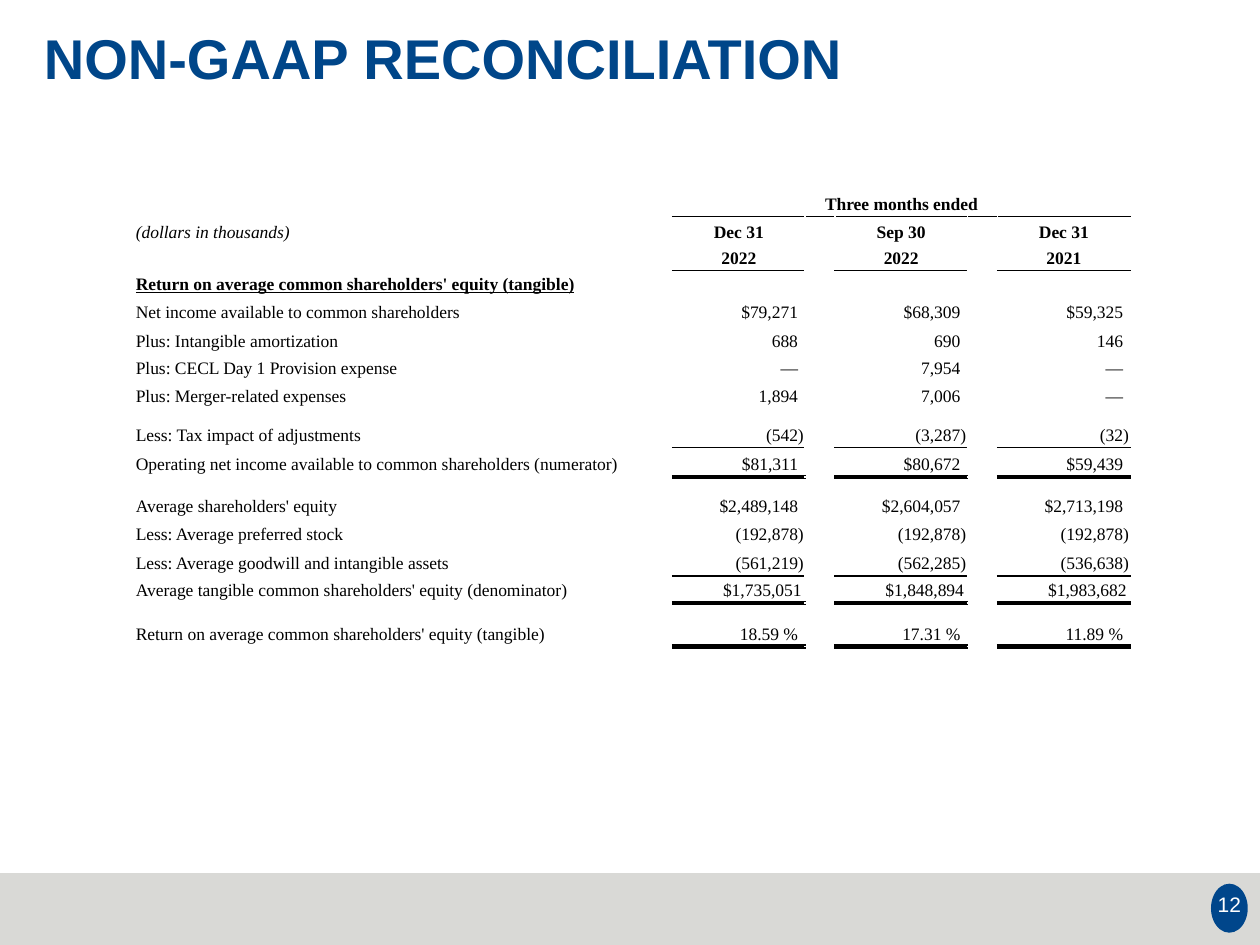
from lxml import etree
from pptx import Presentation
from pptx.dml.color import RGBColor
from pptx.enum.shapes import MSO_SHAPE
from pptx.enum.text import MSO_ANCHOR, PP_ALIGN
from pptx.oxml.ns import qn
from pptx.util import Pt

RECT, OVAL = MSO_SHAPE.RECTANGLE, MSO_SHAPE.OVAL
TOP, MIDDLE, BOTTOM = MSO_ANCHOR.TOP, MSO_ANCHOR.MIDDLE, MSO_ANCHOR.BOTTOM
LEFT, CENTER, RIGHT = PP_ALIGN.LEFT, PP_ALIGN.CENTER, PP_ALIGN.RIGHT

BLUE = RGBColor(0x00, 0x46, 0x89)
BADGE_BLUE = RGBColor(0x00, 0x46, 0x8B)
GRAY = RGBColor(0xD9, 0xD9, 0xD6)
WHITE = RGBColor(0xFF, 0xFF, 0xFF)
BLACK = RGBColor(0x00, 0x00, 0x00)

COL_WIDTHS = [267.8, 41, 75.6, 15.8, 75.6, 17.4, 75.6]
AMOUNT_COLS = (2, 4, 6)
LAST_COL = len(COL_WIDTHS) - 1

# Row height, label, amounts
ROWS = [
    (15, "", ["Three months ended"]),
    (16, "(dollars in thousands)", ["Dec 31", "Sep 30", "Dec 31"]),
    (15, "", ["2022", "2022", "2021"]),
    (15, "Return on average common shareholders' equity (tangible)", []),
    (16, "Net income available to common shareholders", ["$79,271", "$68,309", "$59,325"]),
    (16.5, "Plus: Intangible amortization", ["688", "690", "146"]),
    (15.5, "Plus: CECL Day 1 Provision expense", ["—", "7,954", "—"]),
    (16, "Plus: Merger-related expenses", ["1,894", "7,006", "—"]),
    (22, "Less: Tax impact of adjustments", ["(542)", "(3,287)", "(32)"]),
    (17, "Operating net income available to common shareholders (numerator)",
     ["$81,311", "$80,672", "$59,439"]),
    (10, "", []),
    (14, "Average shareholders' equity", ["$2,489,148", "$2,604,057", "$2,713,198"]),
    (16, "Less: Average preferred stock", ["(192,878)", "(192,878)", "(192,878)"]),
    (16.5, "Less: Average goodwill and intangible assets",
     ["(561,219)", "(562,285)", "(536,638)"]),
    (15.5, "Average tangible common shareholders' equity (denominator)",
     ["$1,735,051", "$1,848,894", "$1,983,682"]),
    (10, "", []),
    (15, "Return on average common shareholders' equity (tangible)",
     ["18.59 %", "17.31 %", "11.89 %"]),
]
HEADER_ROWS = 3
UNITS_ROW, SECTION_ROW, DENOMINATOR_ROW = 1, 3, 14
WIDE_LABEL_ROWS = (3, 4, 6, 9, 11, 13, 14, 16)
RULES = {0: 1, 2: 1, 8: 1, 9: 3, 13: 1, 14: 3, 16: 3}  # row: width of the line below


def add_block(s, kind, box, color):
    sp = s.shapes.add_shape(kind, *map(Pt, box))
    sp.shadow.inherit = False
    sp.fill.solid()
    sp.fill.fore_color.rgb = color
    sp.line.fill.background()


def add_run(p, text, font, size, color, bold=False):
    r = p.add_run()
    r.text = text
    r.font.name, r.font.size, r.font.bold = font, Pt(size), bold
    r.font.color.rgb = color
    return r


def add_text(s, box, text, size, color, align=LEFT, anchor=TOP, bold=False, spacing=1.0):
    tf = s.shapes.add_textbox(*map(Pt, box)).text_frame
    tf.word_wrap = True
    tf.vertical_anchor = anchor
    tf.margin_left = tf.margin_right = tf.margin_bottom = Pt(7.2)
    tf.margin_top = Pt(4.3)
    p = tf.paragraphs[0]
    p.alignment, p.line_spacing = align, spacing
    add_run(p, text, "Arial", size, color, bold)


def rule_width(row, col):
    """Width of the black line below a cell, or 0 where there is none."""
    ruled = col >= AMOUNT_COLS[0] if row == 0 else col in AMOUNT_COLS
    return RULES.get(row, 0) if ruled else 0


def set_borders(cell, row, col):
    tc_pr = cell._tc.get_or_add_tcPr()
    widths = {"lnL": 0, "lnR": 0, "lnT": rule_width(row - 1, col), "lnB": rule_width(row, col)}
    for tag, width in widths.items():
        ln = etree.SubElement(tc_pr, qn(f"a:{tag}"), w=str(Pt(width or 1)))
        fill = etree.SubElement(ln, qn("a:solidFill"))
        etree.SubElement(fill, qn("a:srgbClr"), val=str(BLACK if width else WHITE))


def fill_cell(cell, text, align, right_margin):
    cell.margin_left, cell.margin_right = Pt(2), Pt(right_margin)
    p = cell.text_frame.paragraphs[0]
    p.alignment, p.line_spacing = align, 1.0
    return add_run(p, text, "Times New Roman", 10, BLACK)


def amount_margin(row, text):
    """Closing brackets hang to the right of the digits."""
    if text.endswith(")"):
        return 0.7
    return 2 if row == DENOMINATOR_ROW else 4


def add_reconciliation(s, left, top):
    width, height = sum(COL_WIDTHS), sum(row[0] for row in ROWS)
    table = s.shapes.add_table(len(ROWS), len(COL_WIDTHS), Pt(left), Pt(top),
                               Pt(width), Pt(height)).table
    table.first_row = table.horz_banding = False
    for column, col_width in zip(table.columns, COL_WIDTHS):
        column.width = Pt(col_width)

    for i, (row_height, label, amounts) in enumerate(ROWS):
        table.rows[i].height = Pt(row_height)
        for j in range(len(COL_WIDTHS)):
            cell = table.cell(i, j)
            set_borders(cell, i, j)
            cell.fill.background()
            cell.vertical_anchor = BOTTOM
            cell.margin_top, cell.margin_bottom = Pt(0), Pt(1.4)

        # Label
        if label:
            r = fill_cell(table.cell(i, 0), label, LEFT, 2)
            r.font.italic = i == UNITS_ROW
            r.font.bold = r.font.underline = i == SECTION_ROW
        # Column heads and amounts
        for j, text in zip(AMOUNT_COLS, amounts):
            if i < HEADER_ROWS:
                fill_cell(table.cell(i, j), text, CENTER, 2).font.bold = True
            else:
                fill_cell(table.cell(i, j), text, RIGHT, amount_margin(i, text))

        # Small type in empty cells keeps the rows low
        for cell in table.rows[i].cells:
            p = cell.text_frame.paragraphs[0]
            if not p.runs:
                etree.SubElement(p._p, qn("a:endParaRPr"), sz="400")
        if i in WIDE_LABEL_ROWS:
            table.cell(i, 0).merge(table.cell(i, 1))
    table.cell(0, AMOUNT_COLS[0]).merge(table.cell(0, LAST_COL))


def add_footer(s, left, top, width, height):
    add_block(s, RECT, (left, top, width, height), GRAY)
    # Page number
    add_block(s, OVAL, (left + width - 28, top + 6, 21, 28), BADGE_BLUE)
    add_text(s, (left + width - 34.5, top + 5, 34, 28), "12", 12, WHITE, CENTER, MIDDLE)


def main():
    prs = Presentation()
    prs.slide_width, prs.slide_height = Pt(720), Pt(540)
    s = prs.slides.add_slide(prs.slide_layouts[6])
    add_footer(s, 0, 499, 720, 41)
    add_text(s, (18, 13.7, 696, 82), "NON-GAAP RECONCILIATION", 32, BLUE, bold=True, spacing=0.9)
    add_reconciliation(s, 75.6, 108.7)
    prs.save("out.pptx")


if __name__ == "__main__":
    main()
